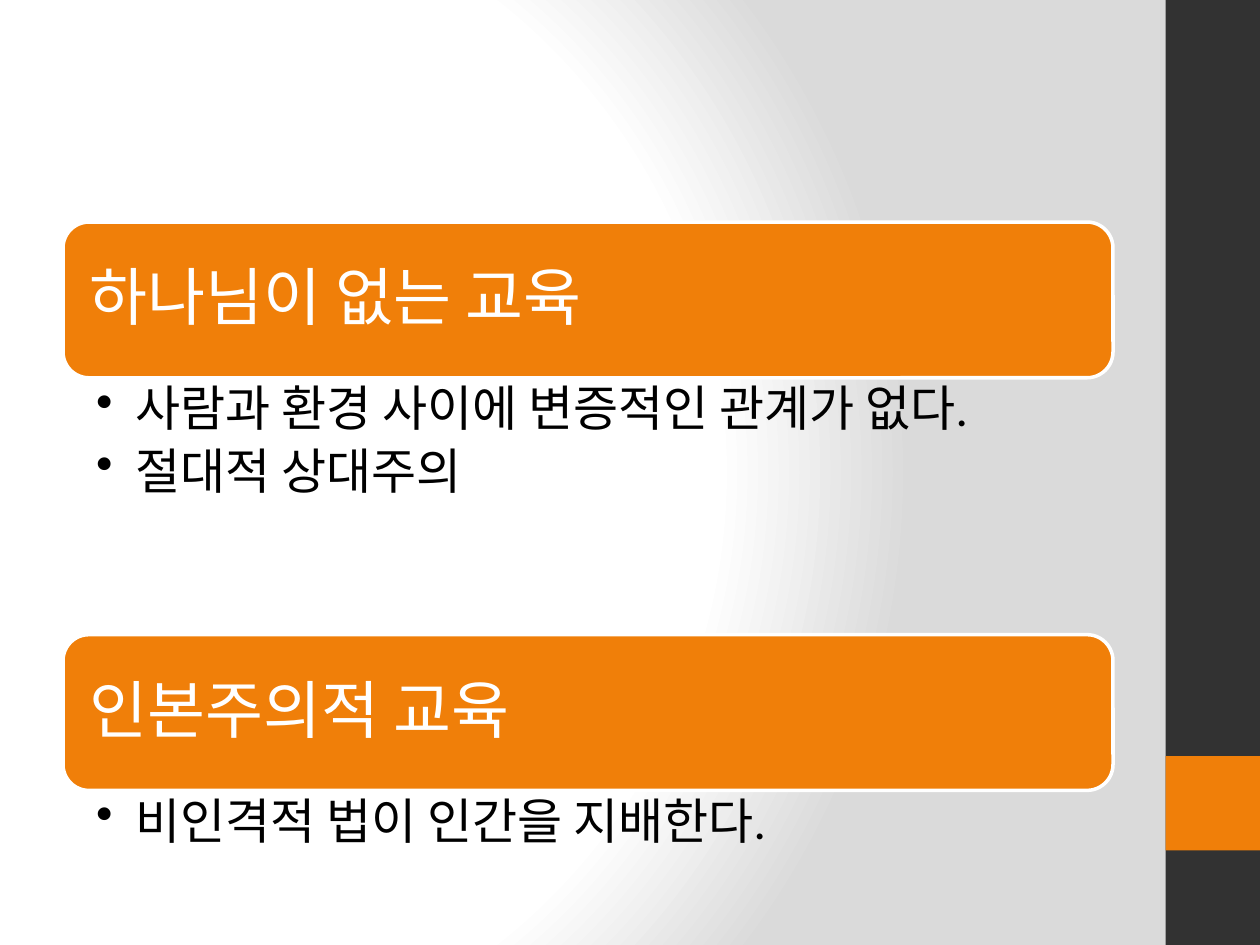
from pptx import Presentation
from pptx.dml.color import RGBColor
from pptx.enum import shapes, text
from pptx.oxml import parse_xml
from pptx.oxml.ns import nsdecls
from pptx.util import Pt

C = {"white": "FFFFFF", "gray": "DADADA", "dark": "323232", "orange": "F07F09", "black": "000000"}

prs = Presentation()
prs.slide_width, prs.slide_height = Pt(720), Pt(540)
s = prs.slides.add_slide(prs.slide_layouts[6])

stops = "".join(
    f'<a:gs pos="{pos}"><a:srgbClr val="{C[name]}"/></a:gs>'
    for pos, name in [(0, "white"), (75000, "white"), (100000, "gray")]
)
s._element.cSld.insert(0, parse_xml(
    f'<p:bg {nsdecls("p", "a")}><p:bgPr><a:gradFill rotWithShape="1"><a:gsLst>{stops}</a:gsLst>'
    '<a:path path="circle"><a:fillToRect l="20000" t="50000" r="100000" b="50000"/></a:path>'
    '</a:gradFill><a:effectLst/></p:bgPr></p:bg>'
))


def add_box(kind, x, y, w, h, color):
    sp = s.shapes.add_shape(kind, Pt(x), Pt(y), Pt(w), Pt(h))
    sp.shadow.inherit = False
    sp.fill.solid()
    sp.fill.fore_color.rgb = RGBColor.from_string(C[color])
    sp.line.fill.background()
    return sp


def add_text(x, y, w, h, lines, size, color, margins, after, bullet=False):
    tf = s.shapes.add_textbox(Pt(x), Pt(y), Pt(w), Pt(h)).text_frame
    tf.word_wrap = True
    tf.margin_left, tf.margin_top, tf.margin_right, tf.margin_bottom = map(Pt, margins)
    for i, line in enumerate(lines):
        p = tf.paragraphs[0] if i == 0 else tf.add_paragraph()
        p.line_spacing = 0.9
        pPr = p._p.get_or_add_pPr()
        pPr.append(parse_xml(
            f'<a:spcAft {nsdecls("a")}><a:spcPct val="{after * 1000}"/></a:spcAft>'
        ))
        if bullet:
            p.level = 1
            pPr.set("marL", str(Pt(22.5)))
            pPr.set("indent", str(-Pt(22.5)))
            pPr.append(parse_xml(f'<a:buChar {nsdecls("a")} char="•"/>'))
        r = p.add_run()
        r.text = line
        r.font.size = Pt(size)
        r.font.name = "Calibri"
        r.font.color.rgb = RGBColor.from_string(C[color])
    return tf


add_box(shapes.MSO_SHAPE.RECTANGLE, 666, 0, 54, 540, "dark")
add_box(shapes.MSO_SHAPE.RECTANGLE, 666, 432, 54, 54, "orange")

sections = [
    (126.9, 147, "하나님이 없는 교육", ["사람과 환경 사이에 변증적인 관계가 없다.", "절대적 상대주의"]),
    (362.7, 51, "인본주의적 교육", ["비인격적 법이 인간을 지배한다."]),
]
for y, body_h, title, points in sections:
    sp = add_box(shapes.MSO_SHAPE.ROUNDED_RECTANGLE, 36, y, 600, 89, "orange")
    sp.line.color.rgb = RGBColor.from_string(C["white"])
    sp.line.width = Pt(2)
    tf = add_text(40.35, y + 4.35, 591.3, 80.3, [title], 36, "white", [10.8] * 4, 35)
    tf.vertical_anchor = text.MSO_ANCHOR.MIDDLE
    add_text(36, y + 89, 600, body_h, points, 28, "black", (19, 3.6, 20, 3.6), 20, True)

prs.save("out.pptx")
